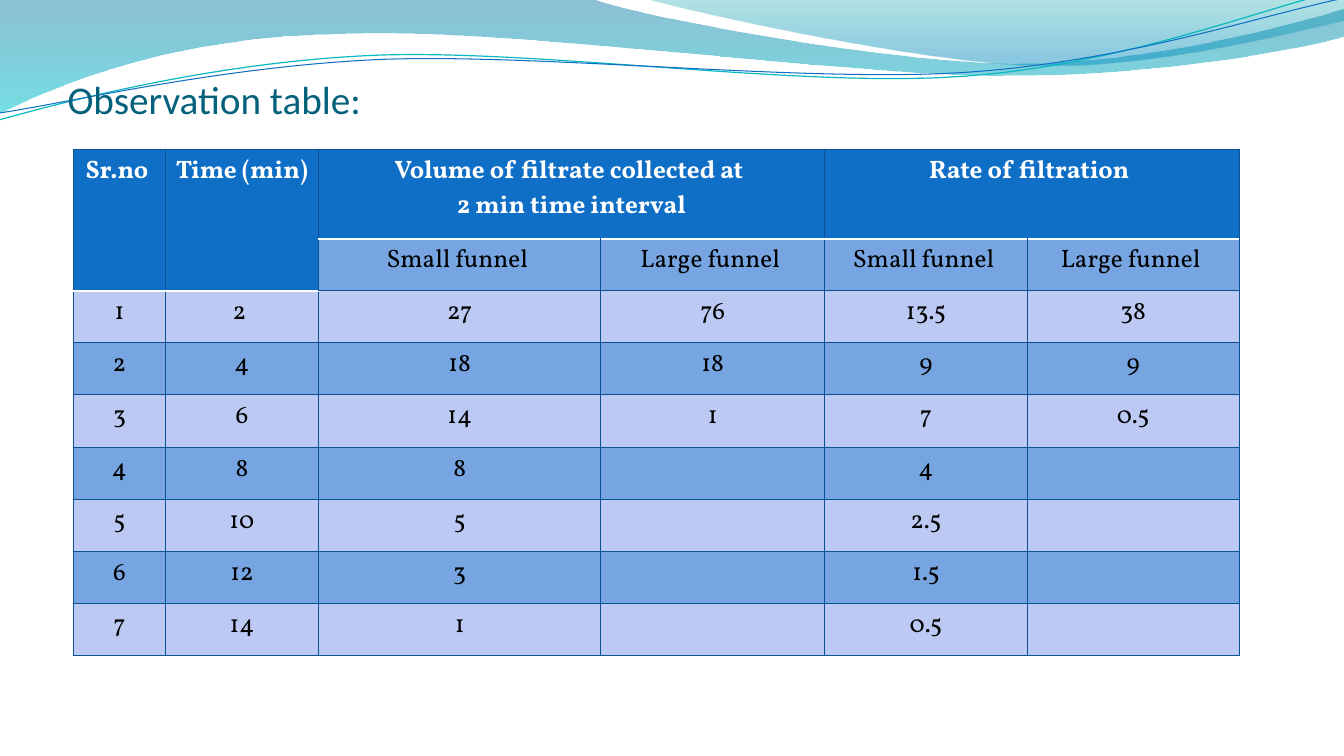
"""Build the filtration observation table slide with its wave header."""
from math import cos, radians, sin

from lxml import etree
from pptx import Presentation
from pptx.dml.color import RGBColor
from pptx.enum.text import MSO_ANCHOR, PP_ALIGN
from pptx.oxml.ns import qn
from pptx.util import Inches, Pt

CENTER = PP_ALIGN.CENTER
BOTTOM = MSO_ANCHOR.BOTTOM


class Theme:
    title_font, title_size, title_color = "Calibri", Pt(28), "04617B"
    table_font, table_size = "Vollkorn", Pt(18)
    header, band, light = "0F6FC6", "76A5E1", "BBC9F3"
    header_text, body_text = "FFFFFF", "000000"
    grid, header_rule = ("095295", 0.75), ("FFFFFF", 2)
    left_wave = [(0, "0074A1", 45), (1, "00C6CF", 55)]
    right_wave = [(0, "00A1A9", 30), (0.8, "008BBF", 45)]
    teal_line, blue_line = ("0AB8BF", 0.85), ("0F6FC6", 0.75)


def add_curve(shapes, box, start, segments, closed, rotation=0):
    """Draw line (2 numbers) and cubic (6 numbers) segments, placed on the slide in inches."""
    left, top, width, height = box
    builder = shapes.build_freeform(Inches(start[0]), Inches(start[1]))
    builder.add_line_segments([(Inches(seg[-2]), Inches(seg[-1])) for seg in segments], closed)
    sp = builder.convert_to_shape()
    sp.left, sp.top, sp.width, sp.height = map(Inches, box)
    sp.rotation = rotation
    sp.shadow.inherit = False
    outline = sp._element.spPr.find(".//" + qn("a:path"))
    outline.set("w", str(Inches(width)))
    outline.set("h", str(Inches(height)))
    for child in list(outline):
        outline.remove(child)
    turn = radians(-rotation)
    for i, seg in enumerate([start] + segments):
        tag = "a:moveTo" if i == 0 else "a:lnTo" if len(seg) == 2 else "a:cubicBezTo"
        command = etree.SubElement(outline, qn(tag))
        for x, y in zip(seg[::2], seg[1::2]):
            dx, dy = x - left - width / 2, y - top - height / 2
            px = width / 2 + dx * cos(turn) - dy * sin(turn)
            py = height / 2 + dx * sin(turn) + dy * cos(turn)
            etree.SubElement(command, qn("a:pt"), x=str(Inches(px)), y=str(Inches(py)))
    if closed:
        etree.SubElement(outline, qn("a:close"))
    return sp


def set_border(cell, index, side, color, width):
    """Put one border line into the cell properties."""
    ln = etree.Element(qn("a:" + side), w=str(Pt(width)))
    fill = etree.SubElement(ln, qn("a:solidFill"))
    etree.SubElement(fill, qn("a:srgbClr"), val=color)
    cell._tc.get_or_add_tcPr().insert(index, ln)


prs = Presentation()
prs.slide_width, prs.slide_height = Inches(13.33), Inches(7.5)
s = prs.slides.add_slide(prs.slide_layouts[6])

waves = [
    ((-0.01, -0.01, 13.36, 1.14), (0, 0),
     [(5.87, -0.01), (6.34, 0.17, 8.85, 0.63, 10.11, 0.63),
      (11.38, 0.63, 12.78, 0.26, 13.33, 0.09), (13.35, 0.36),
      (13.11, 0.44, 11.6, 0.76, 9.94, 0.75), (8.29, 0.75, 5.09, 0.28, 3.43, 0.34),
      (1.72, 0.36, 0.61, 0.83, -0.01, 1.13), (0, 0)], Theme.left_wave),
    ((6.39, -0.01, 6.94, 0.7), (6.39, -0.01),
     [(6.79, 0.11, 9.09, 0.62, 10.25, 0.65), (11.41, 0.69, 12.82, 0.32, 13.33, 0.21),
      (13.33, 0), (6.39, -0.01)], Theme.right_wave),
]
for box, start, segments, stops in waves:
    sp = add_curve(s.shapes, box, start, segments, True)
    sp.line.fill.background()
    sp.fill.gradient()
    sp.fill.gradient_angle = 270
    for stop, (position, color, _) in zip(sp.fill.gradient_stops, stops):
        stop.position = position
        stop.color.rgb = RGBColor.from_string(color)
    colors = list(sp._element.spPr.iter(qn("a:srgbClr")))
    for clr, (_, _, opacity) in zip(colors, stops):
        etree.SubElement(clr, qn("a:alpha"), val=str(opacity * 1000))

wave_lines = [
    ((-0.03, 0.22, 13.36, 0.71), (-0.01, 1.19),
     [(0.64, 1.01, 2.11, 0.62, 3.69, 0.55), (5.27, 0.48, 7.9, 0.87, 9.5, 0.76),
      (11.1, 0.66, 12.52, 0.08, 13.31, -0.1)], Theme.teal_line),
    ((-0.02, 0.3, 13.38, 0.58), (0, 1.12),
     [(0.63, 1.03, 2.18, 0.66, 3.78, 0.59), (5.37, 0.53, 7.96, 0.82, 9.55, 0.72),
      (11.15, 0.62, 12.55, 0.14, 13.34, -0.02)], Theme.blue_line),
]
for box, start, segments, (color, width) in wave_lines:
    sp = add_curve(s.shapes, box, start, segments, False, 357.3)
    sp.fill.background()
    sp.line.color.rgb = RGBColor.from_string(color)
    sp.line.width = Pt(width)

title = s.shapes.add_textbox(Inches(0.67), Inches(0.77), Inches(12), Inches(0.44))
tf = title.text_frame
tf.word_wrap = True
tf.vertical_anchor = BOTTOM
tf.margin_left = tf.margin_right = tf.margin_bottom = 0
tf.margin_top = Inches(0.05)
p = tf.paragraphs[0]
p.text = "Observation table:"
p.font.name, p.font.size = Theme.title_font, Theme.title_size
p.font.color.rgb = RGBColor.from_string(Theme.title_color)

rows = [
    ["Sr.no ", "Time (min)", "Volume of filtrate collected at \n2 min time interval", "",
     "Rate of filtration ", ""],
    ["", "", "Small funnel ", "Large funnel ", "Small funnel ", "Large funnel "],
    ["1", "2 ", "27", "76", "13.5", "38"],
    ["2", "4", "18", "18", "9", "9"],
    ["3", "6", "14", "1", "7", "0.5"],
    ["4", "8", "8", "", "4", ""],
    ["5", "10", "5", "", "2.5", ""],
    ["6", "12", "3", "", "1.5", ""],
    ["7", "14", "1", "", "0.5", ""],
]
widths = [0.91, 1.52, 2.8, 2.22, 2.01, 2.1]
table_height, header_height = 5.02, 0.89
row_height = (table_height - header_height) / (len(rows) - 1)
table = s.shapes.add_table(len(rows), len(widths), Inches(0.73), Inches(1.48),
                           Inches(sum(widths)), Inches(table_height)).table
for column, width in zip(table.columns, widths):
    column.width = Inches(width)
for r, row in enumerate(table.rows):
    row.height = Inches(row_height if r else header_height)

for r, texts in enumerate(rows):
    for c, text in enumerate(texts):
        cell = table.cell(r, c)
        header_end = 1 if c < 2 else 0
        is_header = r <= header_end
        fill = Theme.header if is_header else Theme.band if r % 2 else Theme.light
        cell.fill.solid()
        cell.fill.fore_color.rgb = RGBColor.from_string(fill)
        cell.text = text
        for p in cell.text_frame.paragraphs:
            p.alignment = CENTER
            p.font.name, p.font.size, p.font.bold = Theme.table_font, Theme.table_size, is_header
            p.font.color.rgb = RGBColor.from_string(
                Theme.header_text if is_header else Theme.body_text)
        ruled = {"lnT": r == header_end + 1, "lnB": is_header}
        for index, side in enumerate(("lnL", "lnR", "lnT", "lnB")):
            set_border(cell, index, side, *(Theme.header_rule if ruled.get(side) else Theme.grid))

for first, last in [((0, 0), (1, 0)), ((0, 1), (1, 1)), ((0, 2), (0, 3)), ((0, 4), (0, 5))]:
    table.cell(*first).merge(table.cell(*last))

prs.save("out.pptx")
